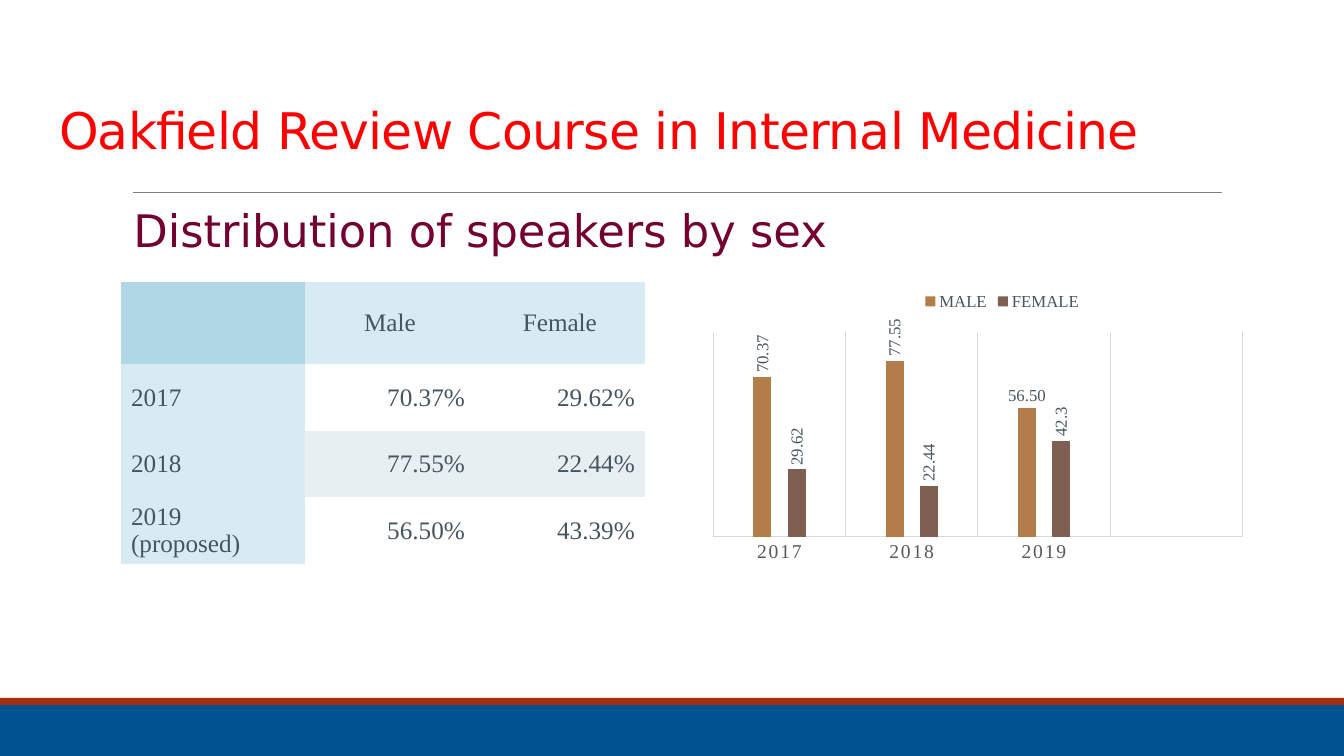
from pptx import Presentation
from pptx.chart.data import CategoryChartData
from pptx.dml.color import RGBColor
from pptx.enum.chart import XL_CHART_TYPE, XL_LABEL_POSITION, XL_LEGEND_POSITION, XL_TICK_MARK
from pptx.enum.shapes import MSO_CONNECTOR, MSO_SHAPE
from pptx.enum.text import MSO_ANCHOR, PP_ALIGN
from pptx.oxml import parse_xml
from pptx.oxml.ns import nsdecls, qn
from pptx.util import Pt

SCALE = 12192000 / 1344
SERIF, SANS = "Times New Roman", "DejaVu Sans"
INK, GREY, RULE = "47555F", "595959", "D9D9D9"

TITLE = "Oakfield Review Course in Internal Medicine"
HEAD = "Distribution of speakers by sex"
BARS = [((0, 705, 1344, 51), "005390"), ((0, 698, 1344, 7), "A5300F")]
ROWS = [
    ("", "Male", "Female"),
    ("2017", "70.37%", "29.62%"),
    ("2018", "77.55%", "22.44%"),
    ("2019 (proposed)", "56.50%", "43.39%"),
]
WIDTHS = [184, 170, 170]
HEIGHTS = [82, 67, 66, 67]
YEARS = ["2017", "2018", "2019", ""]
SERIES = [
    ("MALE", (70.37, 77.55, 56.5, None), "B27D49"),
    ("FEMALE", (29.62, 22.44, 42.3, None), "7F5F52"),
]


def px(*nums):
    return [round(n * SCALE) for n in nums]


def rgb(code):
    return RGBColor.from_string(code)


def put(obj, **vals):
    for key, val in vals.items():
        setattr(obj, key, val)


def mark(node, **vals):
    for key, val in vals.items():
        node.set(key, val)


def style(font, name, size, code):
    put(font, name=name, size=Pt(size))
    font.color.rgb = rgb(code)


def paint(fill, code):
    if code:
        fill.solid()
        fill.fore_color.rgb = rgb(code)
    else:
        fill.background()


def stroke(line, code, width):
    line.color.rgb = rgb(code)
    line.width = Pt(width)


def place(shape, box):
    put(shape, **dict(zip(("left", "top", "width", "height"), px(*box))))


def layout(**vals):
    body = "".join(f'<c:{key} val="{val}"/>' for key, val in vals.items())
    return parse_xml(f'<c:layout {nsdecls("c")}><c:manualLayout>{body}</c:manualLayout></c:layout>')


def write(shape, text, name, size, code, **form):
    para = shape.text_frame.paragraphs[0]
    run = para.add_run()
    run.text = text
    style(run.font, name, size, code)
    put(para, **form)
    return para, run


def tint(row, col):
    if row == 0:
        return "D7EBF2" if col else "AFD7E6"
    if col == 0:
        return "D7EBF2"
    return "E8EFF3" if row == 2 else None


def add_grid(slide):
    box = px(121, 282, sum(WIDTHS), sum(HEIGHTS))
    grid = slide.shapes.add_table(len(ROWS), len(WIDTHS), *box).table
    put(grid, first_row=False, horz_banding=False)
    grid._tbl.tblPr[0].text = "{2D5ABB26-0587-4C30-8999-92F81FD0307C}"
    for col, wide in zip(grid.columns, px(*WIDTHS)):
        col.width = wide
    for row, high in zip(grid.rows, px(*HEIGHTS)):
        row.height = high
    for r, row in enumerate(ROWS):
        for c, text in enumerate(row):
            cell = grid.cell(r, c)
            cell.vertical_anchor = MSO_ANCHOR.MIDDLE
            paint(cell.fill, tint(r, c))
            side = PP_ALIGN.LEFT if c == 0 else PP_ALIGN.RIGHT if r else PP_ALIGN.CENTER
            if text:
                write(cell, text, SERIF, 18, INK, alignment=side)


def add_bars(slide):
    data = CategoryChartData()
    data.categories = YEARS
    for name, vals, _ in SERIES:
        data.add_series(name, vals)
    box = px(713, 274, 530, 292)
    chart = slide.shapes.add_chart(XL_CHART_TYPE.COLUMN_CLUSTERED, *box, data).chart
    put(chart, has_title=False, has_legend=True)
    style(chart.font, "Calibri", 10, "000000")

    key = chart.legend
    put(key, position=XL_LEGEND_POSITION.TOP, include_in_layout=False)
    style(key.font, SERIF, 12, INK)
    for old in key._element.findall(qn("c:layout")):
        key._element.remove(old)
    key._element.find(qn("c:legendPos")).addnext(
        layout(xMode="edge", yMode="edge", x=0.39, y=0.05))

    area = chart._chartSpace.chart.plotArea
    for old in area.findall(qn("c:layout")):
        area.remove(old)
    area.insert(0, layout(layoutTarget="inner", xMode="edge", yMode="edge",
                          x=0, y=0.2, w=1, h=0.7))

    put(chart.value_axis, minimum_scale=0, maximum_scale=90,
        has_major_gridlines=False, visible=False)
    axis = chart.category_axis
    put(axis, has_major_gridlines=True, major_tick_mark=XL_TICK_MARK.NONE)
    style(axis.tick_labels.font, SERIF, 14, GREY)
    mark(axis._element.find(".//" + qn("a:defRPr")), spc="120")
    for line in (axis.format.line, axis.major_gridlines.format.line):
        stroke(line, RULE, 0.75)

    plot = chart.plots[0]
    put(plot, gap_width=444, overlap=-90, vary_by_categories=False)
    for item, (_, _, code) in zip(plot.series, SERIES):
        paint(item.format.fill, code)
        tags = item.data_labels
        put(tags, show_value=True, position=XL_LABEL_POSITION.OUTSIDE_END)
        style(tags.font, SERIF, 12, INK)
        turn = tags._element.find(qn("c:txPr")).find(qn("a:bodyPr"))
        mark(turn, rot="-5400000", vert="horz")
    tag = plot.series[0].points[2].data_label
    write(tag, "56.50", SERIF, 12, INK)
    tag.position = XL_LABEL_POSITION.OUTSIDE_END


def main():
    deck = Presentation()
    put(deck, **dict(zip(("slide_width", "slide_height"), px(1344, 756))))
    slide = deck.slides.add_slide(deck.slide_layouts[1])

    for box, code in BARS:
        bar = slide.shapes.add_shape(MSO_SHAPE.RECTANGLE, *px(*box))
        bar.shadow.inherit = False
        paint(bar.fill, code)
        bar.line.fill.background()
    rule = slide.shapes.add_connector(MSO_CONNECTOR.STRAIGHT, *px(133, 192, 1222, 192))
    stroke(rule.line, "808080", 0.5)
    rule._element.spPr.append(parse_xml(f'<a:effectLst {nsdecls("a")}/>'))

    title, body = slide.placeholders
    place(title, (49, 31, 1180, 134))
    put(title.text_frame, vertical_anchor=MSO_ANCHOR.BOTTOM, word_wrap=True)
    _, run = write(title, TITLE, SANS, 36, "FF0000",
                   alignment=PP_ALIGN.LEFT, line_spacing=0.85)
    mark(run.font._element, spc="-50")

    place(body, (121, 204, 1109, 444))
    put(body.text_frame, margin_left=0, margin_right=0, word_wrap=True)
    para, _ = write(body, HEAD, SANS, 32, "730031", line_spacing=0.9,
                    space_before=Pt(12), space_after=Pt(2))
    props = para._p.get_or_add_pPr()
    mark(props, marL="91440", indent="-91440")
    for part in ('buClr {}><a:srgbClr val="A5300F"/></a:buClr>', 'buChar {} char=" "/>'):
        props.append(parse_xml("<a:" + part.format(nsdecls("a"))))

    add_grid(slide)
    add_bars(slide)
    deck.save("out.pptx")


if __name__ == "__main__":
    main()
